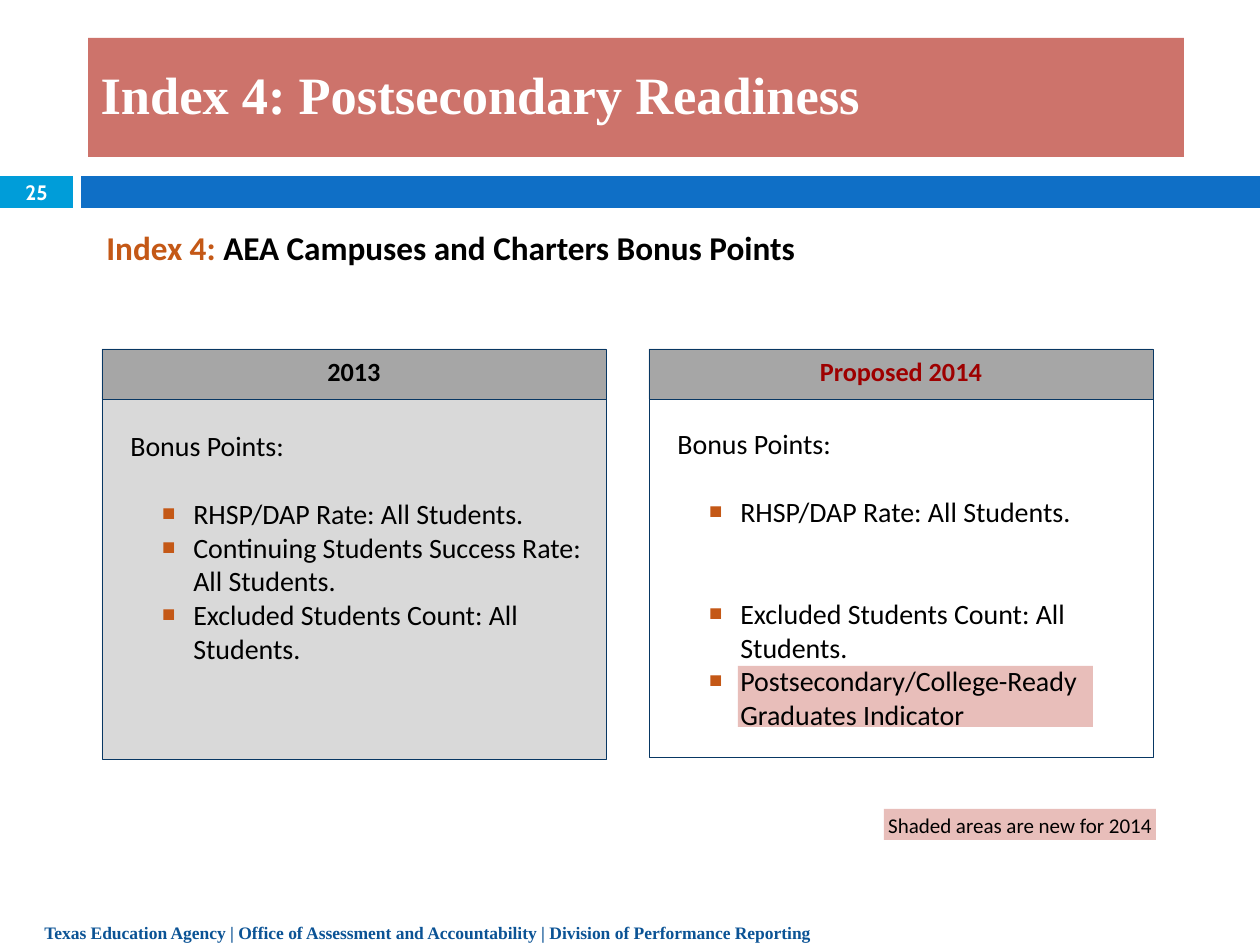
from lxml.etree import SubElement
from pptx import Presentation
from pptx.dml.color import RGBColor
from pptx.enum.shapes import MSO_SHAPE
from pptx.enum.text import MSO_ANCHOR, PP_ALIGN
from pptx.oxml.ns import qn
from pptx.util import Emu, Pt

TITLE = "Index 4: Postsecondary Readiness"
LEAD = [("Index 4: ", "C45816"),
        ("AEA Campuses and Charters Bonus Points", "000000")]
INTRO = "Bonus Points:"
PANELS = [
    {"head": "2013", "ink": "000000", "fill": "D9D9D9",
     "left": 102, "top": 397, "items": [
         ("RHSP/DAP Rate: All Students.", 1),
         ("Continuing Students Success Rate: All Students.", 0),
         ("Excluded Students Count: All Students.", 0)]},
    {"head": "Proposed 2014", "ink": "9E0000", "fill": None,
     "left": 649, "top": 395, "items": [
         ("RHSP/DAP Rate: All Students.", 1),
         ("Excluded Students Count: All Students.", 2),
         ("Postsecondary/College-Ready Graduates Indicator", 0)]},
]
NOTE = "Shaded areas are new for 2014"
FOOTER = ("Texas Education Agency | Office of Assessment and Accountability"
          " | Division of Performance Reporting")
PAGE = "25"
BARS = [((0, 176, 73, 32), "009DD9"), ((81, 176, 1179, 32), "0F6FC6"),
        ((738, 666, 355, 61), "E8BEBA")]
PANEL_W, PANEL_H = 504, 362
HEAD_TOP, HEAD_H = 349, 50
LINE = 19.5


def px(n):
    return Emu(n * 7257)


def color(code):
    return RGBColor.from_string(code)


def paint(shape, fill, line=None):
    if fill:
        shape.fill.solid()
        shape.fill.fore_color.rgb = color(fill)
    else:
        shape.fill.background()
    if line:
        shape.line.color.rgb = color(line)
        shape.line.width = Pt(0.25)
    else:
        shape.line.fill.background()


def rect(spot, fill, line=None):
    shape = slide.shapes.add_shape(MSO_SHAPE.RECTANGLE, *map(px, spot))
    shape.shadow.inherit = False
    paint(shape, fill, line)
    return shape


def box(spot):
    return slide.shapes.add_textbox(*map(px, spot))


def style(para, size, ink, bold=False, face="Calibri", align=PP_ALIGN.LEFT):
    font = para.font
    font.size, font.bold, font.name = Pt(size), bold, face
    font.color.rgb = color(ink)
    para.alignment = align


def write(shape, text, *look, anchor=MSO_ANCHOR.TOP, **more):
    frame = shape.text_frame
    frame.word_wrap = True
    frame.vertical_anchor = anchor
    frame.text = text
    style(frame.paragraphs[0], *look, **more)
    return frame


def indent(para, left, mark=None):
    props = para._p.get_or_add_pPr()
    props.set("marL", str(px(left)))
    props.set("indent", str(-px(32)))
    if mark:
        tint = SubElement(props, qn("a:buClr"))
        SubElement(tint, qn("a:srgbClr"), val="C45816")
        SubElement(props, qn("a:buSzPct"), val="150000")
        SubElement(props, qn("a:buFont"), typeface="Calibri")
        SubElement(props, qn("a:buChar"), char=mark)


def panel(data):
    left, top = data["left"], data["top"]
    body = rect((left, top, PANEL_W, PANEL_H), data["fill"], "083763")
    frame = write(body, INTRO, 16, "000000")
    frame.margin_top = px(32)
    indent(frame.paragraphs[0], 48)
    for text, gap in data["items"]:
        para = frame.add_paragraph()
        para.text = text
        para.level = 1
        para.space_before = Pt(gap * LINE)
        style(para, 16, "000000")
        indent(para, 79, "▪")
    head = rect((left, HEAD_TOP, PANEL_W, HEAD_H), "A6A6A6", "083763")
    write(head, data["head"], 15, data["ink"], True, align=PP_ALIGN.CENTER)


deck = Presentation()
deck.slide_width, deck.slide_height = px(1260), px(945)
slide = deck.slides.add_slide(deck.slide_layouts[5])

title = slide.shapes.title
title.left, title.top, title.width, title.height = map(px, (88, 38, 1096, 119))
paint(title, "CD736B")
frame = write(title, TITLE, 30, "FFFFFF", True, "Times New Roman",
              anchor=MSO_ANCHOR.MIDDLE)
frame.paragraphs[0].line_spacing = Pt(32)

for spot, fill in BARS:
    rect(spot, fill)

write(box((0, 175, 73, 34)), PAGE, 11.9, "FFFFFF", True, "Cabin",
      PP_ALIGN.CENTER, anchor=MSO_ANCHOR.MIDDLE)

for data in PANELS:
    panel(data)

lead = write(box((94, 221, 750, 134)), "", 19, "000000", True).paragraphs[0]
for text, ink in LEAD:
    run = lead.add_run()
    run.text = text
    run.font.color.rgb = color(ink)

foot = write(box((32, 891, 1134, 52)), FOOTER, 10, "0B5395", True,
             "Times New Roman")
foot.paragraphs[0].line_spacing = Pt(26)

note = write(rect((884, 809, 272, 31), "E8BEBA"), NOTE, 12, "000000",
             align=PP_ALIGN.CENTER)
note.margin_left = note.margin_right = px(4)
note.margin_top = note.margin_bottom = px(4)

deck.save("out.pptx")
